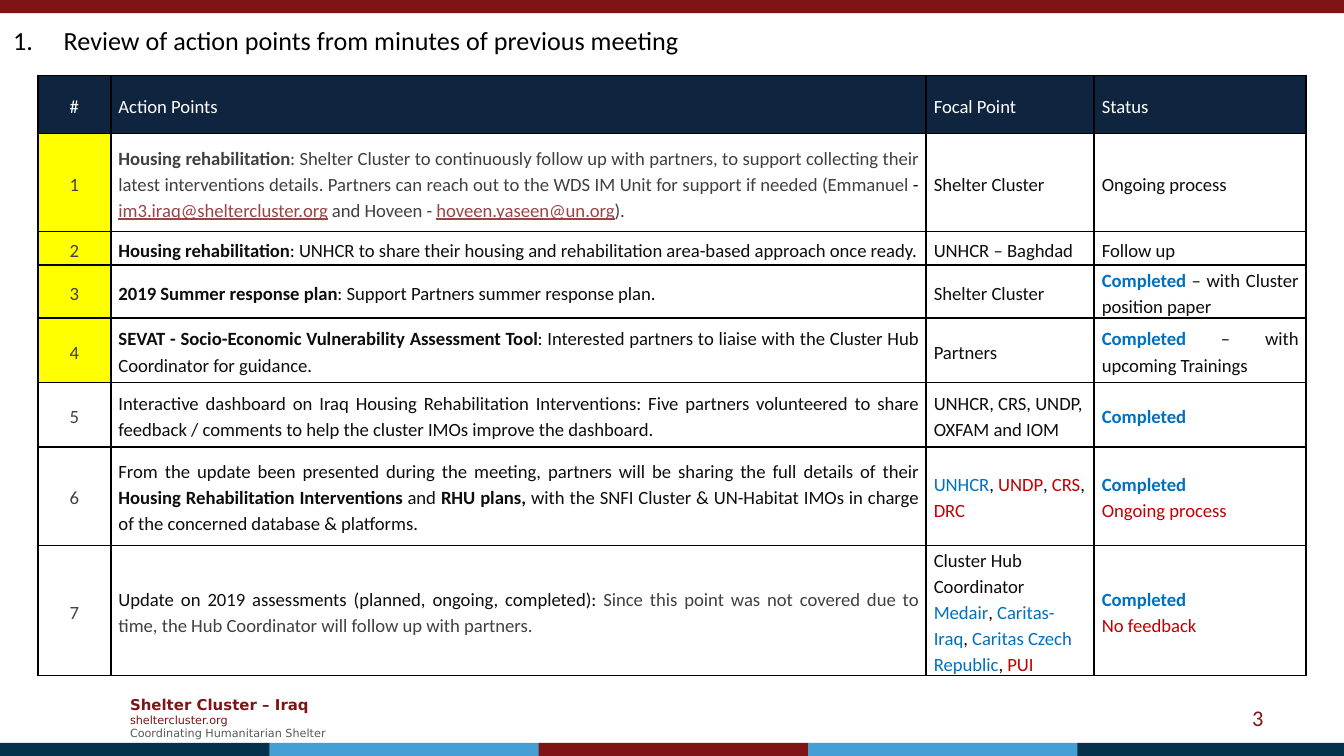
from lxml.etree import SubElement
from pptx import Presentation
from pptx.dml.color import RGBColor
from pptx.enum.shapes import MSO_SHAPE
from pptx.enum.text import MSO_ANCHOR, MSO_AUTO_SIZE, PP_ALIGN
from pptx.oxml.ns import qn
from pptx.util import Pt

MAROON = RGBColor(0x7F, 0x14, 0x16)
TEAL = RGBColor(0x04, 0x31, 0x4C)
SKY = RGBColor(0x45, 0x9F, 0xD5)
NAVY = RGBColor(0x0F, 0x24, 0x3E)
YELLOW = RGBColor(0xFF, 0xFF, 0x00)
WHITE = RGBColor(0xFF, 0xFF, 0xFF)
BLACK = RGBColor(0x00, 0x00, 0x00)
INK = RGBColor(0x0D, 0x0D, 0x0D)
GREY = RGBColor(0x40, 0x40, 0x40)
PALE = RGBColor(0x59, 0x59, 0x59)
BLUE = RGBColor(0x00, 0x70, 0xC0)
RED = RGBColor(0xC0, 0x00, 0x00)
LINK = RGBColor(0x99, 0x43, 0x45)

# Content: a cell is a list of paragraphs, a paragraph a list of
# runs (text, colour, bold)
TITLE = "Review of action points from minutes of previous meeting"
FOOTER = [
    ("Shelter Cluster – Iraq", 8, MAROON, True),
    ("sheltercluster.org", 6, MAROON, False),
    ("Coordinating Humanitarian Shelter", 6, PALE, False),
]
HEADS = ["#", "Action Points", "Focal Point", "Status"]
DONE = ("Completed", BLUE, True)
COMMA = (", ", INK, False)


def plain(text, color=INK):
    return (text, color, False)


def bold(text, color=INK):
    return (text, color, True)


POINTS = [  # action, focal point, status
    ([[bold("Housing rehabilitation", GREY),
       plain(": Shelter Cluster to continuously follow up with partners, to support "
             "collecting their latest interventions details. Partners can reach out to "
             "the WDS IM Unit for support if needed (Emmanuel ", GREY),
       plain("- "), plain("im3.iraq@sheltercluster.org", LINK),
       plain(" and Hoveen - ", GREY), plain("hoveen.yaseen@un.org", LINK),
       plain(").", GREY)]],
     [[plain("Shelter Cluster")]],
     [[plain("Ongoing process")]]),
    ([[bold("Housing rehabilitation"),
       plain(": UNHCR to share their housing and rehabilitation area-based approach "
             "once ready.")]],
     [[plain("UNHCR – Baghdad")]],
     [[plain("Follow up")]]),
    ([[bold("2019 Summer response plan"),
       plain(": Support Partners summer response plan.")]],
     [[plain("Shelter Cluster")]],
     [[DONE, plain(" – with Cluster position paper")]]),
    ([[bold("SEVAT - Socio-Economic Vulnerability Assessment Tool"),
       plain(": Interested partners to liaise with the Cluster Hub Coordinator for "
             "guidance.")]],
     [[plain("Partners")]],
     [[DONE, plain(" – with upcoming Trainings")]]),
    ([[plain("Interactive dashboard on Iraq Housing Rehabilitation Interventions: Five "
             "partners volunteered to share feedback / comments to help the cluster "
             "IMOs improve the dashboard.")]],
     [[plain("UNHCR, CRS, UNDP, OXFAM and IOM")]],
     [[DONE]]),
    ([[plain("From the update been presented during the meeting, partners will be "
             "sharing the full details of their "),
       bold("Housing Rehabilitation Interventions"), plain(" and "),
       bold("RHU plans,"),
       plain(" with the SNFI Cluster & UN-Habitat IMOs in charge of the concerned "
             "database & platforms.")]],
     [[plain("UNHCR", BLUE), COMMA, plain("UNDP", RED), COMMA,
       plain("CRS", RED), COMMA, plain("DRC", RED)]],
     [[DONE], [plain("Ongoing process", RED)]]),
    ([[plain("Update on 2019 assessments (planned, ongoing, completed): "),
       plain("Since this point was not covered due to time, the Hub Coordinator will "
             "follow up with partners.", GREY)]],
     [[plain("Cluster Hub Coordinator")],
      [plain("Medair", BLUE), COMMA, plain("Caritas-Iraq", BLUE), COMMA,
       plain("Caritas Czech Republic", BLUE), COMMA, plain("PUI", RED)]],
     [[DONE], [plain("No feedback", RED)]]),
]
URGENT = 4  # the first points have a yellow number
COLS = [39.2, 436.8, 90, 113.6]
ROWS = [31, 52.6, 18, 18, 34.6, 34.6, 52.6, 34.6]
ALIGNS = [PP_ALIGN.CENTER, PP_ALIGN.JUSTIFY, PP_ALIGN.LEFT, PP_ALIGN.JUSTIFY]
BANDS = [TEAL, SKY, MAROON, SKY, TEAL]

deck = Presentation()
deck.slide_width, deck.slide_height = Pt(720), Pt(405)
slide = deck.slides.add_slide(deck.slide_layouts[6])


def add_run(para, text, size, color, strong=False, face="Calibri"):
    run = para.add_run()
    run.text = text
    font = run.font
    font.name, font.size, font.bold = face, Pt(size), strong
    font.color.rgb = color
    if color == LINK:
        font.underline = True


def add_bar(left, top, width, color):
    bar = slide.shapes.add_shape(
        MSO_SHAPE.RECTANGLE, Pt(left), Pt(top), Pt(width), Pt(7))
    bar.shadow.inherit = False
    bar.fill.solid()
    bar.fill.fore_color.rgb = color
    bar.line.fill.background()


def add_box(left, top, width, height):
    frame = slide.shapes.add_textbox(
        Pt(left), Pt(top), Pt(width), Pt(height)).text_frame
    frame.word_wrap = True
    frame.vertical_anchor = MSO_ANCHOR.MIDDLE
    return frame


def add_paras(frame, count):
    return [frame.paragraphs[0]] + [frame.add_paragraph() for _ in range(count - 1)]


def fill_cell(cell, paras, align, fill):
    cell.margin_left = cell.margin_right = Pt(4.1)
    cell.margin_top, cell.margin_bottom = Pt(0.7), Pt(0)
    cell.vertical_anchor = MSO_ANCHOR.MIDDLE
    # Borders come before the fill in the cell properties
    props = cell._tc.get_or_add_tcPr()
    for side in ("a:lnL", "a:lnR", "a:lnT", "a:lnB"):
        line = SubElement(props, qn(side), w=str(Pt(1)))
        SubElement(SubElement(line, qn("a:solidFill")), qn("a:srgbClr"), val=str(BLACK))
    if fill is None:
        cell.fill.background()
    else:
        cell.fill.solid()
        cell.fill.fore_color.rgb = fill
    for para, runs in zip(add_paras(cell.text_frame, len(paras)), paras):
        para.alignment, para.line_spacing = align, 1.15
        for text, color, strong in runs:
            add_run(para, text, 10, color, strong)


# Footer text and colour bars
frame = add_box(62.6, 368.6, 124.6, 31.7)
frame.auto_size = MSO_AUTO_SIZE.SHAPE_TO_FIT_TEXT
for para, (text, size, color, strong) in zip(add_paras(frame, len(FOOTER)), FOOTER):
    add_run(para, text, size, color, strong, "DejaVu Sans")
add_bar(0, 0, 720, MAROON)
for i, color in enumerate(BANDS):
    add_bar(i * 144.3, 398, 144.7, color)

# Page number
para = add_box(516.2, 373.7, 167.8, 21.6).paragraphs[0]
para.alignment = PP_ALIGN.RIGHT
add_run(para, "3", 12, MAROON)

# Numbered title
para = add_box(0, 9.4, 720, 23.8).paragraphs[0]
props = para._p.get_or_add_pPr()
props.set("marL", str(Pt(27)))
props.set("indent", str(Pt(-27)))
SubElement(props, qn("a:buFont"), typeface="+mj-lt")
SubElement(props, qn("a:buAutoNum"), type="arabicPeriod")
add_run(para, TITLE, 14, BLACK)

# Action table
shape = slide.shapes.add_table(
    len(ROWS), len(COLS), Pt(20.2), Pt(40.5), Pt(sum(COLS)), Pt(sum(ROWS)))
table = shape.table
table.first_row = table.horz_banding = False
for col, width in zip(table.columns, COLS):
    col.width = Pt(width)
for row, height in zip(table.rows, ROWS):
    row.height = Pt(height)
shape.height = Pt(329)
for c, head in enumerate(HEADS):
    fill_cell(table.cell(0, c), [[plain(head, WHITE)]], ALIGNS[c], NAVY)
for r, point in enumerate(POINTS, 1):
    mark = YELLOW if r <= URGENT else None
    fill_cell(table.cell(r, 0), [[plain(str(r), GREY)]], ALIGNS[0], mark)
    for c, paras in enumerate(point, 1):
        fill_cell(table.cell(r, c), paras, ALIGNS[c], None)

deck.save("out.pptx")
